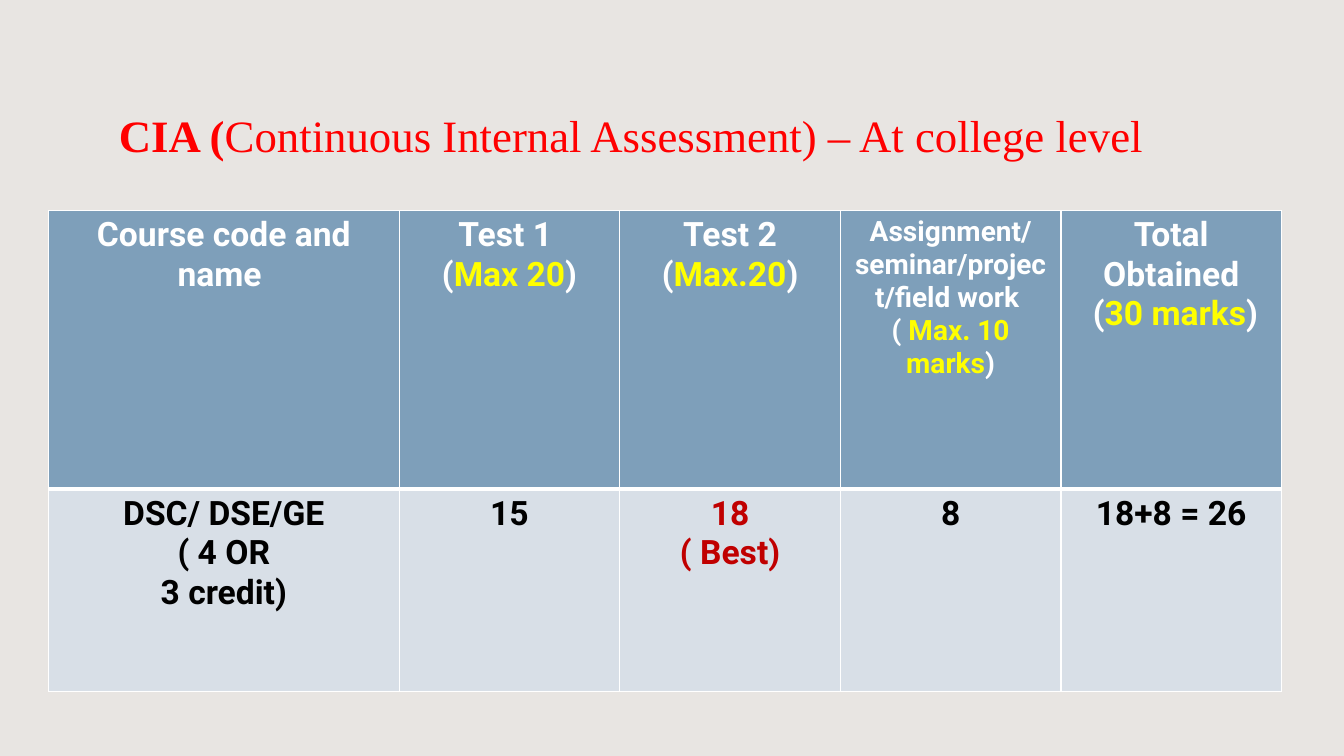
from dataclasses import dataclass

from lxml.etree import SubElement
from pptx import Presentation
from pptx.dml.color import RGBColor
from pptx.enum.text import MSO_ANCHOR, MSO_AUTO_SIZE, PP_ALIGN
from pptx.oxml.ns import qn
from pptx.util import Cm, Pt

BACKGROUND = RGBColor(0xE8, 0xE5, 0xE2)
HEADER_FILL = RGBColor(0x7E, 0x9F, 0xBA)
BODY_FILL = RGBColor(0xD8, 0xDF, 0xE7)
WHITE = RGBColor(0xFF, 0xFF, 0xFF)
BLACK = RGBColor(0x00, 0x00, 0x00)
YELLOW = RGBColor(0xFF, 0xFF, 0x00)
RED = RGBColor(0xFF, 0x00, 0x00)
DARK_RED = RGBColor(0xC0, 0x00, 0x00)

COLUMN_WIDTHS = (8.84, 5.56, 5.56, 5.56, 5.56)
ROW_HEIGHTS = (7.01, 5.11)


@dataclass(frozen=True)
class Span:
    text: str
    color: RGBColor


@dataclass(frozen=True)
class CellContent:
    lines: list[list[Span]]
    fill: RGBColor
    size: int = 24


def header(title: str, opening: str = "", maximum: str = "", size: int = 24) -> CellContent:
    """Heading with an optional highlighted maximum in brackets."""
    lines = [[Span(title, WHITE)]]
    if maximum:
        lines.append([Span(opening, WHITE), Span(maximum, YELLOW), Span(")", WHITE)])
    return CellContent(lines, HEADER_FILL, size)


def body(*lines: str, color: RGBColor = BLACK) -> CellContent:
    return CellContent([[Span(line, color)] for line in lines], BODY_FILL)


ROWS = (
    (
        header("Course code and name "),
        header("Test 1 ", "(", "Max 20"),
        header("Test 2", "(", "Max.20"),
        header("Assignment/ seminar/project/field work ", "( ", "Max. 10 marks", size=20),
        header("Total Obtained", " (", "30 marks"),
    ),
    (
        body("DSC/ DSE/GE", "( 4 OR", "3 credit)"),
        body("15"),
        body("18", "( Best)", color=DARK_RED),
        body("8"),
        body("18+8 = 26"),
    ),
)


def add_span(para, text: str, *, font: str, size: int, color: RGBColor, bold: bool) -> None:
    span = para.add_run()
    span.text = text
    span.font.name = font
    span.font.size = Pt(size)
    span.font.bold = bold
    span.font.color.rgb = color


def set_border(cell, side: str, width: int) -> None:
    line = SubElement(cell._tc.get_or_add_tcPr(), qn(f"a:{side}"), w=str(Pt(width)))
    fill = SubElement(line, qn("a:solidFill"))
    SubElement(fill, qn("a:srgbClr"), val=str(WHITE))


def fill_cell(cell, content: CellContent, widths: dict[str, int]) -> None:
    # Borders come before the fill in the cell properties
    for side, width in widths.items():
        set_border(cell, side, width)
    cell.fill.solid()
    cell.fill.fore_color.rgb = content.fill
    for number, line in enumerate(content.lines):
        frame = cell.text_frame
        para = frame.add_paragraph() if number else frame.paragraphs[0]
        para.alignment = PP_ALIGN.CENTER
        for span in line:
            add_span(para, span.text, font="Roboto", size=content.size,
                     color=span.color, bold=True)


def add_title(page) -> None:
    box = page.shapes.title
    box.left, box.top, box.width, box.height = Cm(2.74), Cm(1.09), Cm(28.37), Cm(3.1)
    frame = box.text_frame
    frame.word_wrap = True
    frame.auto_size = MSO_AUTO_SIZE.NONE
    frame.vertical_anchor = MSO_ANCHOR.BOTTOM
    para = frame.paragraphs[0]
    para.alignment = PP_ALIGN.LEFT
    for text, bold in (("CIA (", True),
                       ("Continuous Internal Assessment) – At college level", False)):
        add_span(para, text, font="Times New Roman", size=32, color=RED, bold=bold)


def add_marks_table(page) -> None:
    table = page.shapes.add_table(
        len(ROWS), len(COLUMN_WIDTHS), Cm(1.22), Cm(5.31),
        Cm(sum(COLUMN_WIDTHS)), Cm(sum(ROW_HEIGHTS))).table
    for column, width in zip(table.columns, COLUMN_WIDTHS):
        column.width = Cm(width)
    for row, height in zip(table.rows, ROW_HEIGHTS):
        row.height = Cm(height)
    for row_number, contents in enumerate(ROWS):
        # The rule between the heading and the marks is thicker
        heavy_side = "lnT" if row_number else "lnB"
        widths = {side: 3 if side == heavy_side else 1
                  for side in ("lnL", "lnR", "lnT", "lnB")}
        for column_number, content in enumerate(contents):
            fill_cell(table.cell(row_number, column_number), content, widths)


def main() -> None:
    deck = Presentation()
    deck.slide_width, deck.slide_height = Cm(33.87), Cm(19.05)
    page = deck.slides.add_slide(deck.slide_layouts.get_by_name("Title Only"))
    page.background.fill.solid()
    page.background.fill.fore_color.rgb = BACKGROUND
    add_title(page)
    add_marks_table(page)
    deck.save("out.pptx")


if __name__ == "__main__":
    main()
